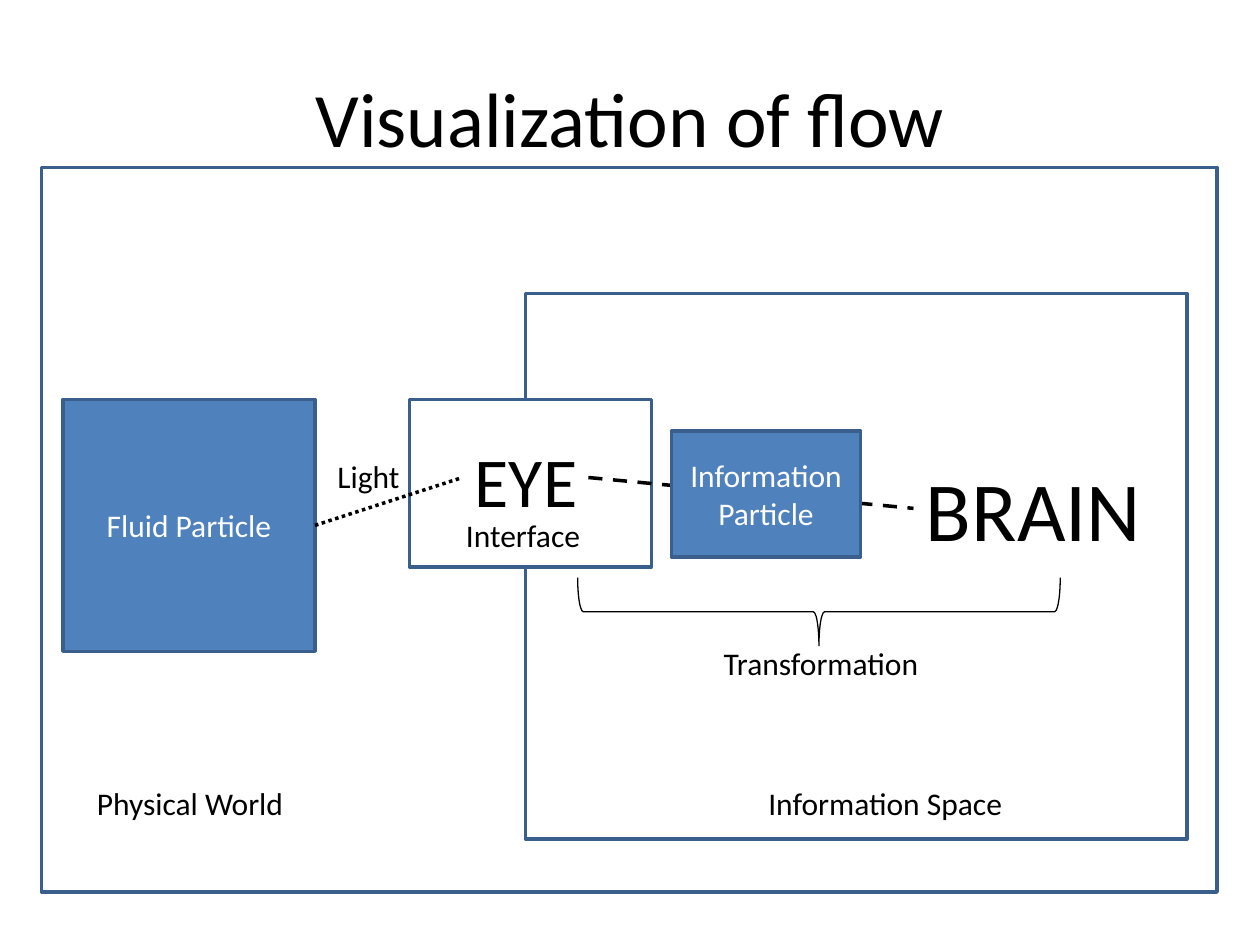
import pptx
import pptx.dml.color
import pptx.enum.dml
import pptx.enum.shapes
import pptx.enum.text
import pptx.oxml.ns
import pptx.util
from lxml import etree

Inches = pptx.util.Inches
Pt = pptx.util.Pt
SHAPES = pptx.enum.shapes.MSO_SHAPE
DASHES = pptx.enum.dml.MSO_LINE
ALIGN = pptx.enum.text.PP_ALIGN
ANCHOR = pptx.enum.text.MSO_ANCHOR

FONT = "Calibri"
COLORS = {
    "box": "4F81BD",
    "border": "3A5F8C",
    "ink": "000000",
    "paper": "FFFFFF",
}
LEFT_SIDE, RIGHT_SIDE = 1, 3


def rgb(name):
    return pptx.dml.color.RGBColor.from_string(COLORS[name])


def write_text(shape, text, size, color, align, anchor):
    frame = shape.text_frame
    frame.word_wrap = True
    frame.vertical_anchor = anchor
    paragraph = frame.paragraphs[0]
    paragraph.text = text
    paragraph.alignment = align
    paragraph.font.name = FONT
    paragraph.font.size = Pt(size)
    paragraph.font.color.rgb = rgb(color)


def add_label(slide, text, left, top, width, height, size=18,
              align=ALIGN.LEFT, anchor=ANCHOR.TOP):
    label = slide.shapes.add_textbox(
        Inches(left), Inches(top), Inches(width), Inches(height))
    write_text(label, text, size, "ink", align, anchor)
    return label


def add_box(slide, left, top, width, height, fill=None, border="border",
            text=None, color="paper", kind=SHAPES.RECTANGLE, weight=2):
    box = slide.shapes.add_shape(
        kind, Inches(left), Inches(top), Inches(width), Inches(height))
    box.shadow.inherit = False
    if fill:
        box.fill.solid()
        box.fill.fore_color.rgb = rgb(fill)
    else:
        box.fill.background()
    if border:
        box.line.color.rgb = rgb(border)
        box.line.width = Pt(weight)
    else:
        box.line.fill.background()
    if text:
        write_text(box, text, 18, color, ALIGN.CENTER, ANCHOR.MIDDLE)
    return box


def add_line(slide, start, end, dash):
    line = slide.shapes.add_connector(
        pptx.enum.shapes.MSO_CONNECTOR.STRAIGHT,
        *[Inches(value) for value in start + end])
    line.line.color.rgb = rgb("ink")
    line.line.width = Pt(2)
    line.line.dash_style = dash
    etree.SubElement(line._element.spPr, pptx.oxml.ns.qn("a:effectLst"))
    return line


def main():
    presentation = pptx.Presentation()
    presentation.slide_width = Inches(10)
    presentation.slide_height = Inches(7.5)
    slide = presentation.slides.add_slide(presentation.slide_layouts[6])

    # Information space and the eye on its edge
    add_box(slide, 4.17, 2.33, 5.25, 4.33)
    add_box(slide, 3.25, 3.17, 1.92, 1.33, fill="paper")

    # Title and names of the two regions
    add_label(slide, "Visualization of flow", 0.5, 0.3, 9, 1.25, size=44,
              align=ALIGN.CENTER, anchor=ANCHOR.MIDDLE)
    add_label(slide, "Information Space", 6, 6.17, 3.67, 0.4)
    add_label(slide, "Physical World", 0.67, 6.17, 4.25, 0.4)

    # Physical world
    fluid = add_box(slide, 0.5, 3.17, 2, 2, fill="box", text="Fluid Particle")
    add_box(slide, 0.33, 1.33, 9.33, 5.75)

    # Light from the particle to the eye
    add_label(slide, "Interface", 3.6, 4.05, 1.17, 0.4)
    light = add_line(slide, (2.5, 4.17), (3.67, 3.79), DASHES.ROUND_DOT)
    light.begin_connect(fluid, RIGHT_SIDE)
    add_label(slide, "Light", 2.58, 3.58, 1.58, 0.4)

    # Signal from the eye to the brain, passing behind the particle
    signal = add_line(slide, (4.67, 3.79), (7.25, 4.04), DASHES.DASH)
    add_box(slide, 5.33, 3.42, 1.5, 1, fill="box", text="Information Particle")
    brain = add_label(slide, "BRAIN", 7.25, 3.58, 2.08, 0.91, size=48)
    signal.end_connect(brain, LEFT_SIDE)
    add_label(slide, "EYE", 3.67, 3.42, 1.08, 0.77, size=40)

    # Transformation under its brace
    add_box(slide, 5.64, 5.01, 1.75, 0.5, fill="paper", border=None,
            text="Transformation", color="ink")
    brace = add_box(slide, 6.23, 2.94, 0.54, 3.83, border="ink",
                    kind=SHAPES.LEFT_BRACE, weight=0.75)
    brace.rotation = 270

    presentation.save("out.pptx")


if __name__ == "__main__":
    main()
